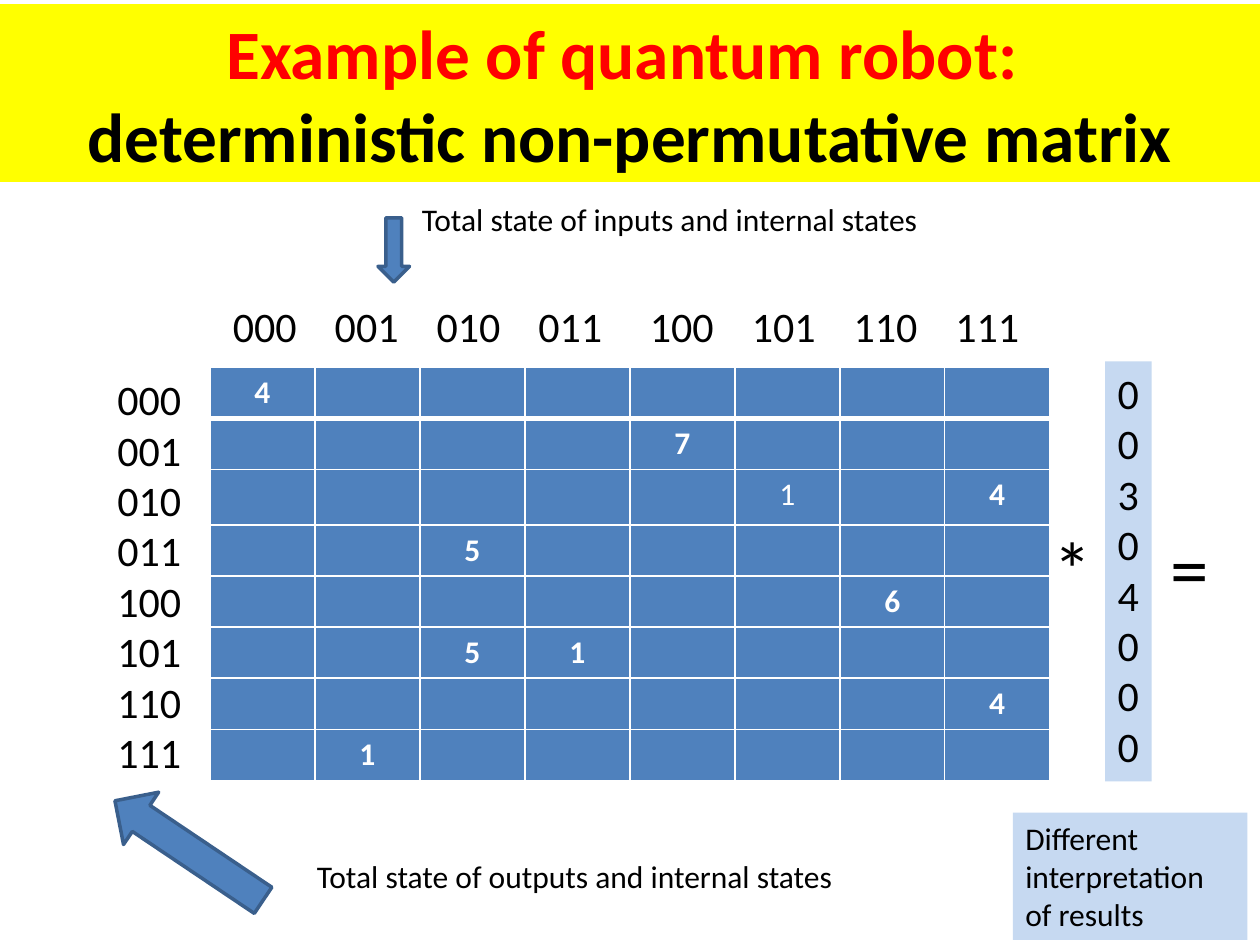
from lxml import etree
from pptx import Presentation
from pptx import util as u
from pptx.dml.color import RGBColor
from pptx.enum import shapes, text
from pptx.oxml import ns

Pt = u.Pt
YELLOW = RGBColor(0xFF, 0xFF, 0x00)
RED = RGBColor(0xFF, 0x00, 0x00)
BLACK = RGBColor(0x00, 0x00, 0x00)
WHITE = RGBColor(0xFF, 0xFF, 0xFF)
BLUE = RGBColor(0x4F, 0x81, 0xBD)
DARK_BLUE = RGBColor(0x3A, 0x5F, 0x8C)
PALE_BLUE = RGBColor(0xC6, 0xD9, 0xF1)

FONT = "Calibri"
STATES = [f"{number:03b}" for number in range(8)]
ENTRIES = {(0, 0): "4", (1, 4): "7", (2, 5): "1", (2, 7): "4", (3, 2): "5",
           (4, 6): "6", (5, 2): "5", (5, 3): "1", (6, 7): "4", (7, 1): "1"}
PLAIN_ENTRY = (2, 5)
INPUT_VECTOR = "00304000"


class SlideBuilder:
    def __init__(self, slide):
        self.slide = slide

    def format_runs(self, paragraph, size, color=BLACK, bold=False):
        for run in paragraph.runs:
            run.font.name = FONT
            run.font.size = Pt(size)
            run.font.bold = bold
            run.font.color.rgb = color

    def set_text(self, shape, content, size, align=text.PP_ALIGN.LEFT,
                 anchor=text.MSO_ANCHOR.TOP, bold=False):
        frame = shape.text_frame
        frame.word_wrap = True
        frame.vertical_anchor = anchor
        frame.text = content
        for paragraph in frame.paragraphs:
            paragraph.alignment = align
            self.format_runs(paragraph, size, bold=bold)

    def label(self, left, top, width, height, content, size):
        shape = self.slide.shapes.add_textbox(
            Pt(left), Pt(top), Pt(width), Pt(height))
        self.set_text(shape, content, size)
        return shape

    def panel(self, left, top, width, height, fill, content, size, **style):
        shape = self.shape(shapes.MSO_SHAPE.RECTANGLE,
                           left, top, width, height, fill)
        self.set_text(shape, content, size, **style)
        return shape

    def shape(self, kind, left, top, width, height, fill):
        shape = self.slide.shapes.add_shape(
            kind, Pt(left), Pt(top), Pt(width), Pt(height))
        shape.shadow.inherit = False
        shape.fill.solid()
        shape.fill.fore_color.rgb = fill
        shape.line.fill.background()
        return shape

    def arrow(self, kind, left, top, width, height, rotation=0):
        shape = self.shape(kind, left, top, width, height, BLUE)
        shape.line.color.rgb = DARK_BLUE
        shape.line.width = Pt(2)
        shape.rotation = rotation

    def tab_stops(self, paragraph, positions):
        properties = paragraph._p.get_or_add_pPr()
        tabs = etree.SubElement(properties, ns.qn("a:tabLst"))
        for position in positions:
            etree.SubElement(tabs, ns.qn("a:tab"),
                             pos=str(Pt(position)), algn="l")

    def borders(self, cell, **widths):
        properties = cell._tc.get_or_add_tcPr()
        for side in "LRTB":
            line = etree.SubElement(properties, ns.qn(f"a:ln{side}"),
                                    w=str(Pt(widths.get(side, 1))))
            fill = etree.SubElement(line, ns.qn("a:solidFill"))
            etree.SubElement(fill, ns.qn("a:srgbClr"), val=str(WHITE))

    def matrix(self, left, top, column_width, row_heights, entries):
        count = len(row_heights)
        table = self.slide.shapes.add_table(
            count, count, Pt(left), Pt(top),
            Pt(column_width * count), Pt(sum(row_heights))).table
        for column in table.columns:
            column.width = Pt(column_width)
        for row, height in enumerate(row_heights):
            table.rows[row].height = Pt(height)
            for column in range(count):
                cell = table.cell(row, column)
                # Thick rule under the first row
                self.borders(cell, T=3 if row == 1 else 1,
                             B=3 if row == 0 else 1)
                cell.fill.solid()
                cell.fill.fore_color.rgb = BLUE
                position = (row, column)
                if position in entries:
                    cell.text_frame.text = entries[position]
                    paragraph = cell.text_frame.paragraphs[0]
                    paragraph.alignment = text.PP_ALIGN.CENTER
                    self.format_runs(paragraph, 18, WHITE,
                                     bold=position != PLAIN_ENTRY)


def main():
    presentation = Presentation()
    presentation.slide_width = Pt(720)
    presentation.slide_height = Pt(540)
    builder = SlideBuilder(
        presentation.slides.add_slide(presentation.slide_layouts[6]))

    # Title band
    title = builder.panel(
        0, 2.4, 720, 101.5, YELLOW,
        "Example of quantum robot: \vdeterministic non-permutative matrix",
        39.6, align=text.PP_ALIGN.CENTER, anchor=text.MSO_ANCHOR.MIDDLE,
        bold=True)
    title.text_frame.paragraphs[0].runs[0].font.color.rgb = RED

    # Transition matrix
    row_heights = [29.2] * 8
    row_heights[2] = 31.6
    builder.matrix(120, 210, 60, row_heights, ENTRIES)

    # Row and column states, with a wider gap before the second half
    builder.label(60, 210, 60, 240, "\n".join(STATES), 24)
    header = builder.label(126, 168, 517, 36, "\t".join(STATES), 24)
    builder.tab_stops(header.text_frame.paragraphs[0],
                      [58.2 * i + (5.5 if i >= 4 else 0)
                       for i in range(1, 8)])

    # Captions and their arrows
    builder.label(234, 111, 391, 29,
                  "Total state of inputs and internal states", 18)
    builder.arrow(shapes.MSO_SHAPE.DOWN_ARROW, 216, 124.5, 18, 36.75)
    builder.label(174, 486, 391, 29,
                  "Total state of outputs and internal states", 18)
    builder.arrow(shapes.MSO_SHAPE.RIGHT_ARROW, 57, 468, 102, 36, 213.9)

    # Input vector and operators
    builder.panel(631.6, 206.5, 26.6, 240, PALE_BLUE,
                  "\n".join(INPUT_VECTOR), 24)
    builder.label(662, 294, 36, 60.5, "=", 44)
    builder.label(595, 294, 50, 60.5, "*", 44)

    # Remark
    builder.panel(578.8, 464.4, 134, 72.7, PALE_BLUE,
                  "Different interpretation of results", 18)

    presentation.save("out.pptx")


if __name__ == "__main__":
    main()
